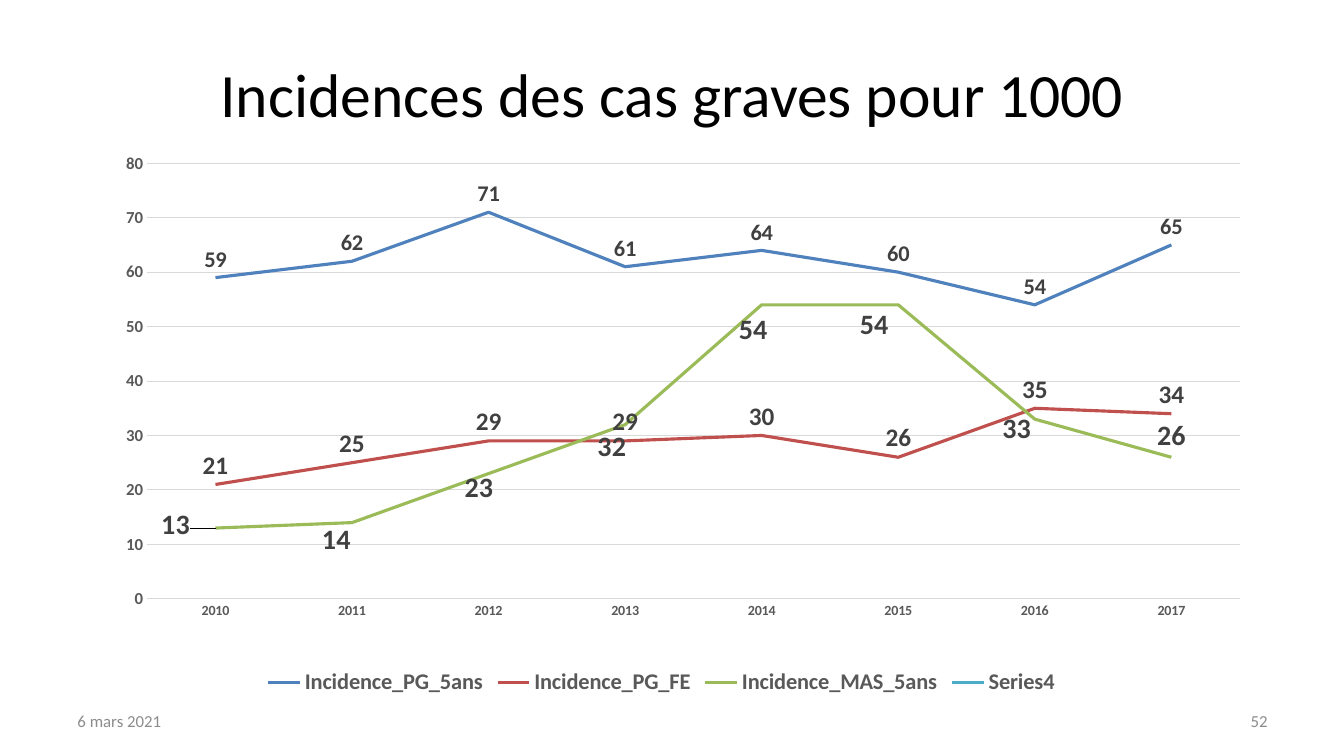
"""Build a slide with a line chart of severe case incidence per 1000."""
import pptx
import pptx.util
import pptx.chart.data
import pptx.dml.color
import pptx.enum.chart
import pptx.enum.text
import pptx.oxml
import pptx.oxml.ns

Inches, Pt = pptx.util.Inches, pptx.util.Pt
RGB = pptx.dml.color.RGBColor.from_string
enum = pptx.enum.chart
ALIGN = pptx.enum.text.PP_ALIGN
COLORS = {"title": "000000", "foot": "8C8C8C", "axis": "595959", "grid": "D9D9D9",
          "label": "404040", "blue": "4F81BD", "red": "C0504D", "green": "9BBB59",
          "teal": "4BACC6"}


def style(font, size, color, bold=True):
    """Set the face, size, colour and weight of a font."""
    for key, val in {"name": "Calibri", "size": Pt(size), "bold": bold}.items():
        setattr(font, key, val)
    font.color.rgb = RGB(COLORS[color])


def place(node, index, parts):
    """Give a chart element a manual layout."""
    for old in node.findall(pptx.oxml.ns.qn("c:layout")):
        node.remove(old)
    body = "".join(f'<c:{tag} val="{val}"/>' for tag, val in parts.items())
    node.insert(index, pptx.oxml.parse_xml(
        f'<c:layout {pptx.oxml.ns.nsdecls("c")}><c:manualLayout>{body}'
        '</c:manualLayout></c:layout>'))


deck = pptx.Presentation()
deck.slide_width, deck.slide_height = Inches(13.33), Inches(7.5)
slide = deck.slides.add_slide(deck.slide_layouts[6])

TEXTS = [
    ("Incidences des cas graves pour 1000", (0.67, 0.3, 12, 1.25), 44, "title", ALIGN.CENTER),
    ("6 mars 2021", (0.67, 6.95, 3.11, 0.4), 12, "foot", ALIGN.LEFT),
    ("52", (9.56, 6.95, 3.11, 0.4), 12, "foot", ALIGN.RIGHT),
]
for text, box, size, color, align in TEXTS:
    frame = slide.shapes.add_textbox(*map(Inches, box)).text_frame
    frame.word_wrap = True
    frame.vertical_anchor = pptx.enum.text.MSO_ANCHOR.MIDDLE
    para = frame.paragraphs[0]
    para.text, para.alignment = text, align
    style(para.runs[0].font, size, color, False)

SERIES = [
    ("Incidence_PG_5ans", (59, 62, 71, 61, 64, 60, 54, 65), "blue", 16),
    ("Incidence_PG_FE", (21, 25, 29, 29, 30, 26, 35, 34), "red", 18),
    ("Incidence_MAS_5ans", (13, 14, 23, 32, 54, 54, 33, 26), "green", 20),
    ("Series4", (None,) * 8, "teal", 9),
]
data = pptx.chart.data.CategoryChartData()
data.categories = [str(year) for year in range(2010, 2018)]
for name, vals, _, _ in SERIES:
    data.add_series(name, vals)
chart = slide.shapes.add_chart(enum.XL_CHART_TYPE.LINE, Inches(0.56), Inches(1.5),
                               Inches(12), Inches(5.45), data).chart
style(chart.font, 10, "title", False)
chart.has_title = False
chart.has_legend = True
chart.legend.position = enum.XL_LEGEND_POSITION.BOTTOM
chart.legend.include_in_layout = False
style(chart.legend.font, 16, "axis")
place(chart.plots[0]._element.getparent(), 0,
      {"layoutTarget": "inner", "xMode": "edge", "yMode": "edge",
       "x": 0.075, "y": 0.022, "w": 0.903, "h": 0.793})

years, scale = chart.category_axis, chart.value_axis
for axis, size in ((years, 10), (scale, 12)):
    axis.major_tick_mark = axis.minor_tick_mark = enum.XL_TICK_MARK.NONE
    style(axis.tick_labels.font, size, "axis")
years.has_major_gridlines = False
scale.has_major_gridlines = True
for key, val in {"minimum_scale": 0, "maximum_scale": 80, "major_unit": 10}.items():
    setattr(scale, key, val)
scale.format.line.fill.background()
for line in (years.format.line, scale.major_gridlines.format.line):
    line.color.rgb, line.width = RGB(COLORS["grid"]), Pt(0.75)

for series, (_, _, color, size) in zip(chart.plots[0].series, SERIES):
    series.smooth = False
    series.marker.style = enum.XL_MARKER_STYLE.NONE
    series.format.line.color.rgb = RGB(COLORS[color])
    series.format.line.width = Pt(2.25)
    labels = series.data_labels
    labels.show_value = True
    labels.position = enum.XL_LABEL_POSITION.ABOVE
    style(labels.font, size, "label", color != "teal")

SHIFTS = [(-3.3, 3.3), (-1.3, 6.9), (-0.8, 6.4), (-1.1, 7.8), (-0.7, 8.4),
          (-2, 7.5), (-1.5, 5.6)]
green = chart.plots[0].series[2]
for i, (dx, dy) in enumerate(SHIFTS):
    label = green.points[i].data_label
    style(label.font, 20, "label")
    label.position = enum.XL_LABEL_POSITION.ABOVE
moved = green.data_labels._element.findall(pptx.oxml.ns.qn("c:dLbl"))
for node, (dx, dy) in zip(moved, SHIFTS):
    place(node, 1, {"x": dx / 100, "y": dy / 100})

deck.save("out.pptx")
